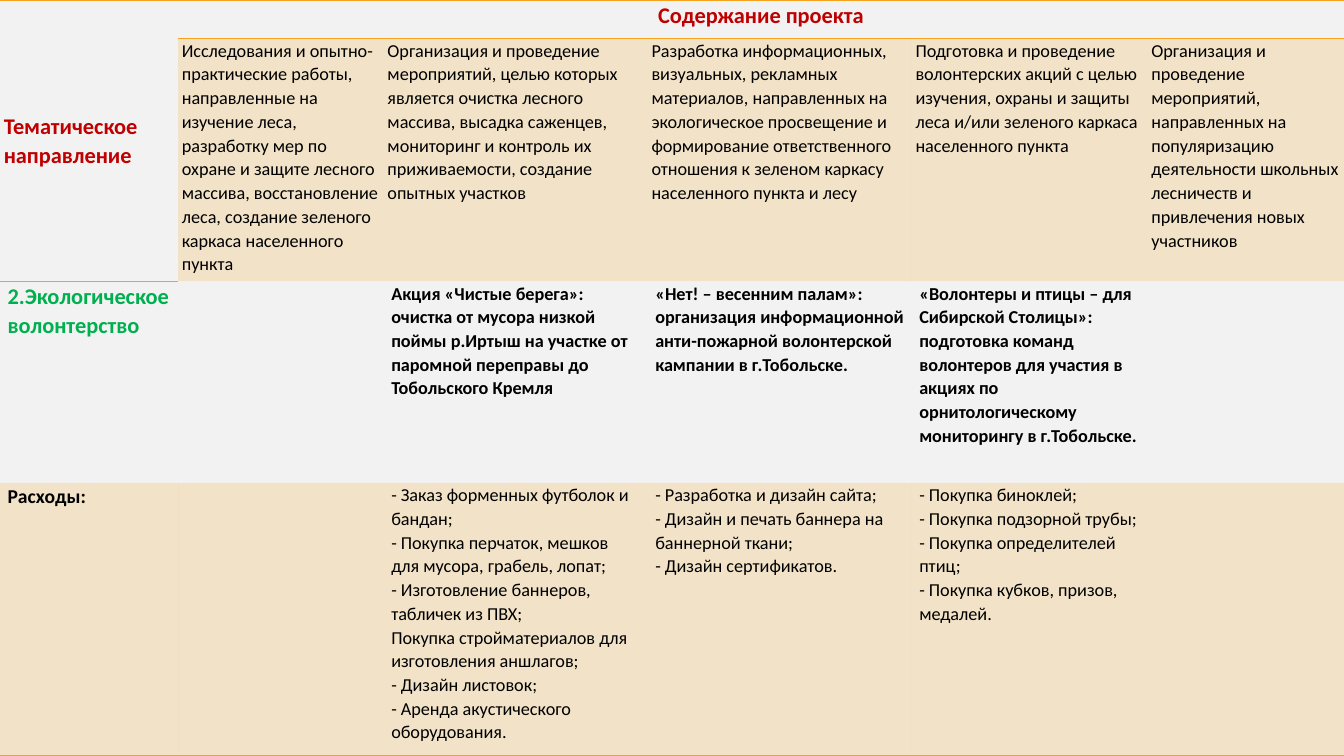
from dataclasses import dataclass

from lxml import etree
from pptx import Presentation
from pptx.dml.color import RGBColor
from pptx.enum.text import MSO_ANCHOR, PP_ALIGN
from pptx.oxml.ns import qn
from pptx.table import _Cell
from pptx.util import Pt

LEFT, CENTER = PP_ALIGN.LEFT, PP_ALIGN.CENTER
TOP, MIDDLE = MSO_ANCHOR.TOP, MSO_ANCHOR.MIDDLE

BACKGROUND = RGBColor(0xF2, 0xF2, 0xF2)
ORANGE = RGBColor(0xF6, 0xA2, 0x1D)
RED = RGBColor(0xC0, 0x00, 0x00)
GREEN = RGBColor(0x00, 0xB0, 0x50)
BLACK = RGBColor(0x00, 0x00, 0x00)

FONT_NAME = "Calibri"
PLAIN_TABLE_STYLE = "{2D5ABB26-0587-4C30-8999-92F81FD0307C}"
COLUMN_WIDTHS = (127.2, 146.9, 188.6, 188.6, 168.5, 140.2)
ROW_HEIGHTS = (27.4, 173.5, 144, 195.1)
SHADED_ROWS = (1, 3)
NARROW, WIDE = 2.7, 5.4


@dataclass(frozen=True)
class Entry:
    row: int
    column: int
    lines: tuple[str, ...]
    size: float = 13
    bold: bool = False
    color: RGBColor = BLACK
    margin: float = WIDE
    align: PP_ALIGN = LEFT
    anchor: MSO_ANCHOR = TOP


ACTIVITIES = (
    "Исследования и опытно-практические работы, направленные на изучение леса, "
    "разработку мер по охране и защите лесного массива, восстановление леса, "
    "создание зеленого каркаса населенного пункта",
    "Организация и проведение мероприятий, целью которых является очистка лесного "
    "массива, высадка саженцев, мониторинг и контроль их приживаемости, создание "
    "опытных участков",
    "Разработка информационных, визуальных, рекламных материалов, направленных на "
    "экологическое просвещение и формирование ответственного отношения к зеленом "
    "каркасу населенного пункта и лесу",
    "Подготовка и проведение волонтерских акций с целью изучения, охраны и защиты "
    "леса и/или зеленого каркаса населенного пункта",
    "Организация и проведение мероприятий, направленных на популяризацию "
    "деятельности школьных лесничеств и привлечения новых участников",
)
PROJECTS = (
    "Акция «Чистые берега»: очистка от мусора низкой поймы р.Иртыш на участке от "
    "паромной переправы до Тобольского Кремля",
    "«Нет! – весенним палам»: организация информационной анти-пожарной "
    "волонтерской кампании в г.Тобольске.",
    "«Волонтеры и птицы – для Сибирской Столицы»: подготовка команд волонтеров для "
    "участия в акциях по орнитологическому мониторингу в г.Тобольске.",
)
EXPENSES = (
    (
        "- Заказ форменных футболок и бандан;",
        "- Покупка перчаток, мешков для мусора, грабель, лопат;",
        "- Изготовление баннеров, табличек из ПВХ;",
        "Покупка стройматериалов для изготовления аншлагов;",
        "- Дизайн листовок;",
        "- Аренда акустического оборудования.",
    ),
    (
        "- Разработка и дизайн сайта;",
        "- Дизайн и печать баннера на баннерной ткани;",
        "- Дизайн сертификатов.",
    ),
    (
        "- Покупка биноклей;",
        "- Покупка подзорной трубы;",
        "- Покупка определителей птиц;",
        "- Покупка кубков, призов, медалей.",
    ),
)
ENTRIES = (
    Entry(0, 0, ("Тематическое направление",), size=16, bold=True, color=RED,
          margin=NARROW, anchor=MIDDLE),
    Entry(0, 1, ("Содержание проекта",), size=16, bold=True, color=RED,
          margin=NARROW, align=CENTER),
    *(Entry(1, column, (text,), margin=NARROW)
      for column, text in enumerate(ACTIVITIES, start=1)),
    Entry(2, 0, ("2.Экологическое волонтерство",), size=16, bold=True, color=GREEN),
    *(Entry(2, column, (text,), bold=True)
      for column, text in enumerate(PROJECTS, start=2)),
    Entry(3, 0, ("Расходы:",), size=14, bold=True),
    *(Entry(3, column, lines) for column, lines in enumerate(EXPENSES, start=2)),
)


def write_text(cell: _Cell, lines: tuple[str, ...], *, size: float, bold: bool,
               color: RGBColor, align: PP_ALIGN) -> None:
    text_frame = cell.text_frame
    for index, line in enumerate(lines):
        paragraph = text_frame.add_paragraph() if index else text_frame.paragraphs[0]
        paragraph.alignment = align
        paragraph.line_spacing = 1.07
        run = paragraph.add_run()
        run.text = line
        run.font.name = FONT_NAME
        run.font.size = Pt(size)
        run.font.bold = bold
        run.font.color.rgb = color


def set_margins(cell: _Cell, side: float) -> None:
    cell.margin_left = cell.margin_right = Pt(side)
    cell.margin_top = cell.margin_bottom = Pt(0)


def add_borders(cell: _Cell, *tags: str) -> None:
    """Add orange lines; they must precede the fill in the cell properties."""
    properties = cell._tc.get_or_add_tcPr()
    for position, tag in enumerate(tags):
        line = etree.Element(qn(tag), w=str(Pt(1)))
        fill = etree.SubElement(line, qn("a:solidFill"))
        etree.SubElement(fill, qn("a:srgbClr"), val=str(ORANGE))
        properties.insert(position, line)


def shade(cell: _Cell) -> None:
    cell.fill.solid()
    cell.fill.fore_color.rgb = ORANGE
    color = cell._tc.tcPr.find(qn("a:solidFill")).find(qn("a:srgbClr"))
    etree.SubElement(color, qn("a:alpha"), val="20000")


def main() -> None:
    presentation = Presentation()
    presentation.slide_width, presentation.slide_height = Pt(960), Pt(540)
    slide = presentation.slides.add_slide(presentation.slide_layouts[6])
    slide.background.fill.solid()
    slide.background.fill.fore_color.rgb = BACKGROUND

    # Table grid
    frame = slide.shapes.add_table(
        len(ROW_HEIGHTS), len(COLUMN_WIDTHS), Pt(0), Pt(0),
        Pt(sum(COLUMN_WIDTHS)), Pt(sum(ROW_HEIGHTS)))
    table = frame.table
    table.first_row = table.horz_banding = False
    table._tbl.tblPr.find(qn("a:tableStyleId")).text = PLAIN_TABLE_STYLE
    for column, width in zip(table.columns, COLUMN_WIDTHS):
        column.width = Pt(width)
    for row, height in zip(table.rows, ROW_HEIGHTS):
        row.height = Pt(height)

    # Fills and borders
    last_row = len(ROW_HEIGHTS) - 1
    for row_index in range(len(ROW_HEIGHTS)):
        for column_index in range(len(COLUMN_WIDTHS)):
            cell = table.cell(row_index, column_index)
            set_margins(cell, WIDE)
            if row_index in SHADED_ROWS and (row_index, column_index) != (1, 0):
                shade(cell)
            else:
                cell.fill.background()
            if row_index == 0:
                add_borders(cell, "a:lnT", "a:lnB")
            elif row_index == last_row or (row_index, column_index) == (1, 0):
                add_borders(cell, "a:lnB")

    # Merged headings
    table.cell(0, 0).merge(table.cell(1, 0))
    table.cell(0, 1).merge(table.cell(0, len(COLUMN_WIDTHS) - 1))

    # Cell text
    for entry in ENTRIES:
        cell = table.cell(entry.row, entry.column)
        set_margins(cell, entry.margin)
        cell.vertical_anchor = entry.anchor
        write_text(cell, entry.lines, size=entry.size, bold=entry.bold,
                   color=entry.color, align=entry.align)

    presentation.save("out.pptx")


if __name__ == "__main__":
    main()
